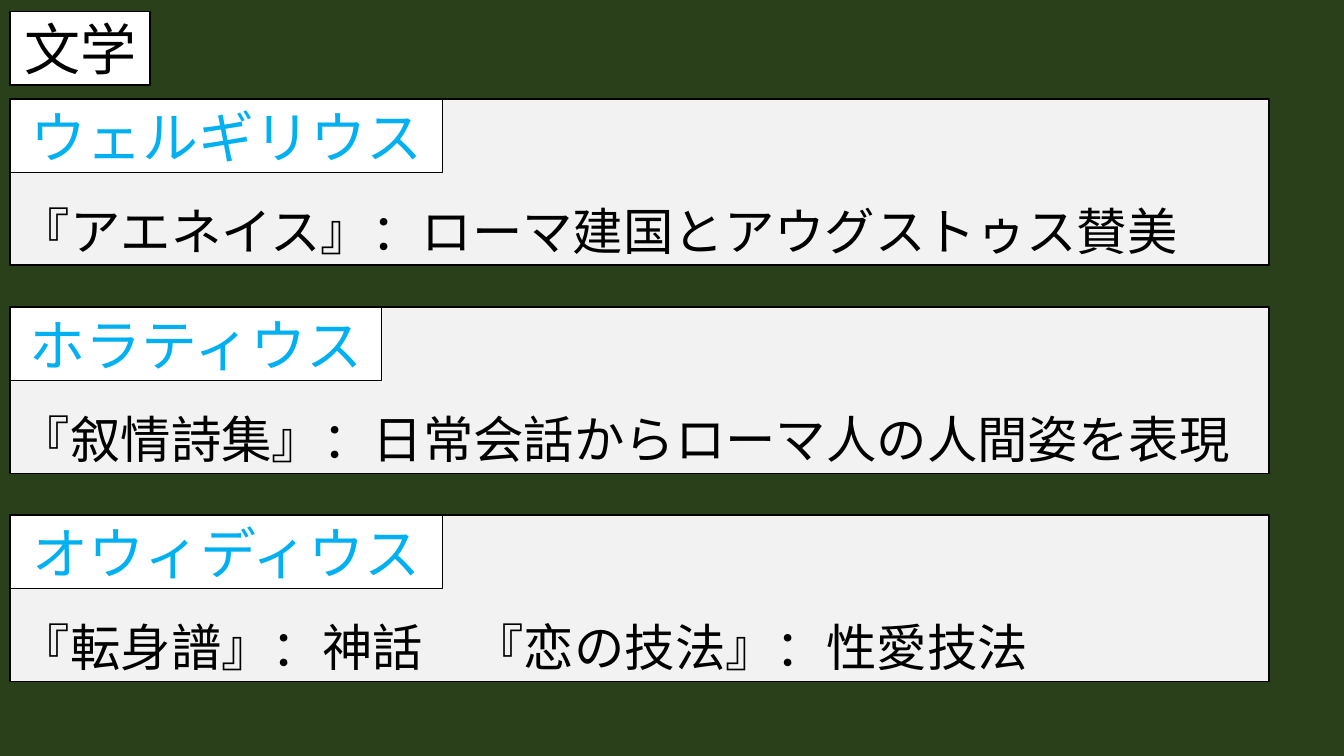
from dataclasses import dataclass

from pptx import Presentation
from pptx.dml.color import RGBColor
from pptx.enum.shapes import MSO_SHAPE
from pptx.enum.text import MSO_ANCHOR, PP_ALIGN
from pptx.slide import Slide
from pptx.util import Inches, Pt

RECT = MSO_SHAPE.RECTANGLE
LOW, MID = MSO_ANCHOR.BOTTOM, MSO_ANCHOR.MIDDLE
LEFT, CENTER = PP_ALIGN.LEFT, PP_ALIGN.CENTER

WIDE, HIGH = Inches(13.333), Inches(7.5)
COL, ROW = WIDE / 100, HIGH / 100
FONT = "Roboto"
GREEN, GRAY, WHITE = "29401A", "F2F2F2", "FFFFFF"
BLACK, BLUE = "000000", "00B0F0"

EDGE = 0.75
TOP, STEP = 13.08, 27.52
BODY_WIDE, BODY_HIGH = 93.68, 22
TAB_HIGH = 9.74


@dataclass
class Box:
    top: float
    wide: float
    high: float
    text: str
    fill: str = WHITE
    color: str = BLACK
    size: int = 40
    anchor: MSO_ANCHOR = MID
    align: PP_ALIGN = CENTER


@dataclass
class Poet:
    name: str
    wide: float
    works: str


POETS = [
    Poet("ウェルギリウス", 32.18, "『アエネイス』：ローマ建国とアウグストゥス賛美"),
    Poet("ホラティウス", 27.65, "『叙情詩集』：日常会話からローマ人の人間姿を表現"),
    Poet("オウィディウス", 32.18, "『転身譜』：神話　『恋の技法』：性愛技法"),
]


def paint(code: str) -> RGBColor:
    return RGBColor.from_string(code)


def draw_box(slide: Slide, box: Box) -> None:
    shape = slide.shapes.add_shape(
        RECT,
        round(EDGE * COL),
        round(box.top * ROW),
        round(box.wide * COL),
        round(box.high * ROW),
    )
    shape.shadow.inherit = False
    shape.fill.solid()
    shape.fill.fore_color.rgb = paint(box.fill)
    shape.line.color.rgb = paint(BLACK)
    shape.line.width = Pt(1)
    frame = shape.text_frame
    frame.word_wrap = True
    frame.vertical_anchor = box.anchor
    para = frame.paragraphs[0]
    para.alignment = box.align
    run = para.add_run()
    run.text = box.text
    run.font.name = FONT
    run.font.size = Pt(box.size)
    run.font.color.rgb = paint(box.color)


def draw_poet(slide: Slide, top: float, poet: Poet) -> None:
    draw_box(slide, Box(top, BODY_WIDE, BODY_HIGH, poet.works, GRAY, BLACK, 36, LOW, LEFT))
    draw_box(slide, Box(top, poet.wide, TAB_HIGH, poet.name, color=BLUE))


def main() -> None:
    deck = Presentation()
    deck.slide_width, deck.slide_height = WIDE, HIGH
    slide = deck.slides.add_slide(deck.slide_layouts[6])
    back = slide.background.fill
    back.solid()
    back.fore_color.rgb = paint(GREEN)
    for index, poet in enumerate(POETS):
        draw_poet(slide, TOP + index * STEP, poet)
    draw_box(slide, Box(1.5, 10.43, TAB_HIGH, "文学"))
    deck.save("out.pptx")


if __name__ == "__main__":
    main()
